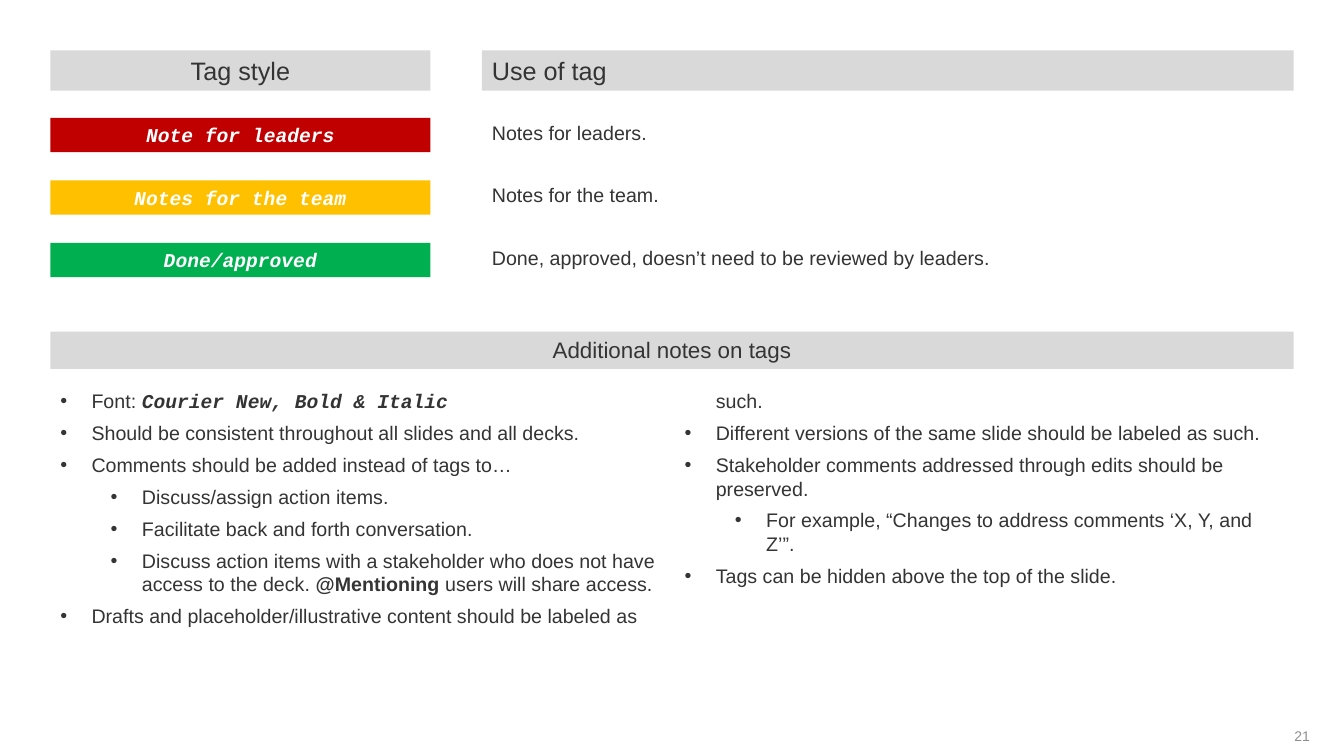
from dataclasses import dataclass
from typing import Optional

from lxml.etree import SubElement
from pptx import Presentation
from pptx.dml.color import RGBColor
from pptx.enum.shapes import MSO_SHAPE
from pptx.enum.text import MSO_ANCHOR, MSO_AUTO_SIZE, PP_ALIGN
from pptx.oxml.ns import qn
from pptx.util import Inches, Pt

COLORS = {
    "ink": "343434",
    "header": "D9D9D9",
    "leaders": "C00000",
    "team": "FFC000",
    "done": "00B050",
    "white": "FFFFFF",
    "page": "8F8F8F",
}
SANS, MONO = "Arial", "Courier New"
LEFT, STYLE_WIDTH = 0.5, 3.77
USE_LEFT, USE_WIDTH = 4.78, 8.05
FULL_WIDTH = USE_LEFT + USE_WIDTH - LEFT
FIRST_TAG_TOP, TAG_STEP, TAG_HEIGHT = 1.17, 0.62, 0.34


@dataclass(frozen=True)
class Box:
    left: float
    top: float
    width: float
    height: float


@dataclass(frozen=True)
class Header:
    label: str
    box: Box
    size: int
    align: PP_ALIGN


@dataclass(frozen=True)
class Tag:
    label: str
    use: str
    color: str


@dataclass(frozen=True)
class Span:
    text: str
    font: str = SANS
    bold: bool = False
    italic: bool = False


@dataclass(frozen=True)
class Note:
    spans: tuple[Span, ...]
    level: int = 0


HEADERS = (
    Header("Tag style", Box(LEFT, 0.5, STYLE_WIDTH, 0.4), 18, PP_ALIGN.CENTER),
    Header("Use of tag", Box(USE_LEFT, 0.5, USE_WIDTH, 0.4), 18, PP_ALIGN.LEFT),
    Header("Additional notes on tags", Box(LEFT, 3.29, FULL_WIDTH, 0.37), 16, PP_ALIGN.CENTER),
)
TAGS = (
    Tag("Note for leaders", "Notes for leaders.", "leaders"),
    Tag("Notes for the team", "Notes for the team.", "team"),
    Tag("Done/approved", "Done, approved, doesn’t need to be reviewed by leaders.", "done"),
)
NOTES = (
    Note((Span("Font: "), Span("Courier New, Bold & Italic", MONO, True, True))),
    Note((Span("Should be consistent throughout all slides and all decks."),)),
    Note((Span("Comments should be added instead of tags to…"),)),
    Note((Span("Discuss/assign action items."),), 1),
    Note((Span("Facilitate back and forth conversation."),), 1),
    Note((
        Span("Discuss action items with a stakeholder who does not have access to the deck. "),
        Span("@Mentioning", bold=True),
        Span(" users will share access."),
    ), 1),
    Note((Span("Drafts and placeholder/illustrative content should be labeled as such."),)),
    Note((Span("Different versions of the same slide should be labeled as such."),)),
    Note((Span("Stakeholder comments addressed through edits should be preserved."),)),
    Note((Span("For example, “Changes to address comments ‘X, Y, and Z’”."),), 1),
    Note((Span("Tags can be hidden above the top of the slide."),)),
)


def add_run(paragraph, text: str, *, size: int = 14, color: str = "ink", font: str = SANS,
            bold: bool = False, italic: bool = False) -> None:
    run = paragraph.add_run()
    run.text = text
    run.font.name = font
    run.font.size = Pt(size)
    run.font.bold = bold
    run.font.italic = italic
    run.font.color.rgb = RGBColor.from_string(COLORS[color])


def add_frame(slide, box: Box, *, fill: Optional[str] = None, grow: bool = True,
              anchor: MSO_ANCHOR = MSO_ANCHOR.TOP):
    place = [Inches(length) for length in (box.left, box.top, box.width, box.height)]
    if fill is None:
        holder = slide.shapes.add_textbox(*place)
    else:
        holder = slide.shapes.add_shape(MSO_SHAPE.RECTANGLE, *place)
        holder.shadow.inherit = False
        holder.fill.solid()
        holder.fill.fore_color.rgb = RGBColor.from_string(COLORS[fill])
        holder.line.fill.background()
    frame = holder.text_frame
    frame.word_wrap = True
    frame.auto_size = MSO_AUTO_SIZE.SHAPE_TO_FIT_TEXT if grow else MSO_AUTO_SIZE.NONE
    frame.vertical_anchor = anchor
    return frame


def add_text(slide, text: str, box: Box, *, fill: Optional[str] = None, grow: bool = True,
             anchor: MSO_ANCHOR = MSO_ANCHOR.TOP, align: PP_ALIGN = PP_ALIGN.LEFT,
             **run_format) -> None:
    paragraph = add_frame(slide, box, fill=fill, grow=grow, anchor=anchor).paragraphs[0]
    paragraph.alignment = align
    add_run(paragraph, text, **run_format)


def add_tag(slide, tag: Tag, top: float) -> None:
    add_text(slide, tag.label, Box(LEFT, top, STYLE_WIDTH, TAG_HEIGHT), fill=tag.color,
             anchor=MSO_ANCHOR.MIDDLE, align=PP_ALIGN.CENTER, color="white", font=MONO,
             bold=True, italic=True)
    add_text(slide, tag.use, Box(USE_LEFT, top - 0.02, USE_WIDTH, TAG_HEIGHT))


def add_notes(slide, notes: tuple[Note, ...], box: Box) -> None:
    frame = add_frame(slide, box)
    body = frame._txBody.bodyPr
    body.set("numCol", "2")
    body.set("spcCol", str(Inches(0.25)))
    for index, note in enumerate(notes):
        paragraph = frame.add_paragraph() if index else frame.paragraphs[0]
        paragraph.level = note.level
        paragraph.space_before = Pt(6)
        properties = paragraph._p.get_or_add_pPr()
        properties.set("marL", str(Inches(0.31 + 0.5 * note.level)))
        properties.set("indent", str(Inches(-0.31)))
        SubElement(properties, qn("a:buFont")).set("typeface", SANS)
        SubElement(properties, qn("a:buChar")).set("char", "•")
        for span in note.spans:
            add_run(paragraph, span.text, font=span.font, bold=span.bold, italic=span.italic)


def main() -> None:
    deck = Presentation()
    deck.slide_width, deck.slide_height = Inches(13.33), Inches(7.5)
    slide = deck.slides.add_slide(deck.slide_layouts[6])
    for header in HEADERS:
        add_text(slide, header.label, header.box, fill="header", size=header.size,
                 align=header.align)
    for row, tag in enumerate(TAGS):
        add_tag(slide, tag, FIRST_TAG_TOP + row * TAG_STEP)
    add_notes(slide, NOTES, Box(LEFT, 3.81, FULL_WIDTH, 2.62))
    add_text(slide, "21", Box(12.49, 7.1, 0.6, 0.4), grow=False, anchor=MSO_ANCHOR.MIDDLE,
             align=PP_ALIGN.RIGHT, size=10, color="page")
    deck.save("out.pptx")


if __name__ == "__main__":
    main()
